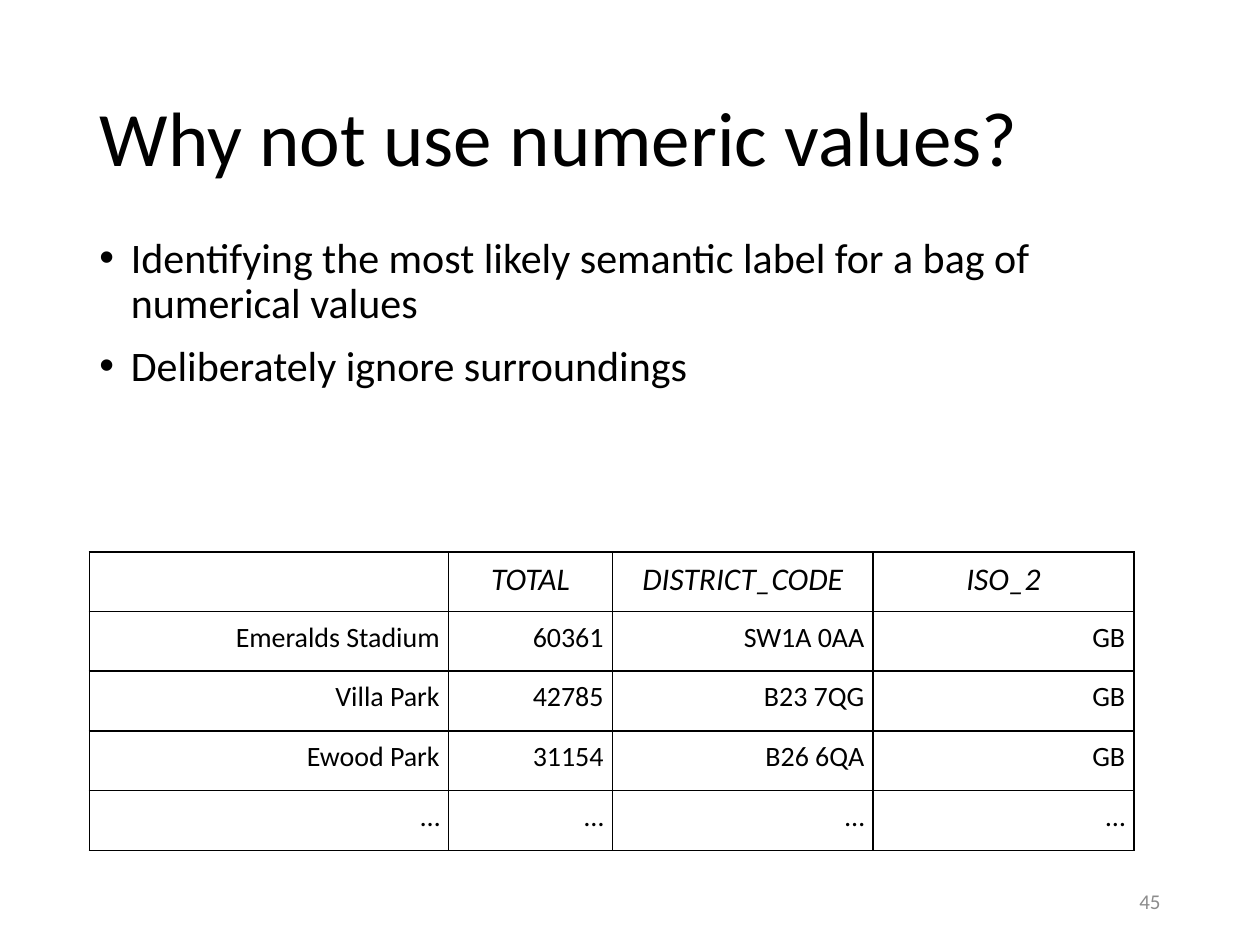
from dataclasses import dataclass

from lxml.etree import SubElement
from pptx import Presentation
from pptx.dml.color import RGBColor
from pptx.enum.text import MSO_ANCHOR as Anchor, MSO_AUTO_SIZE as AutoSize, PP_ALIGN as Align
from pptx.oxml import parse_xml
from pptx.oxml.ns import nsdecls, qn
from pptx.util import Inches, Pt

COLORS = {"text": "000000", "background": "FFFFFF", "border": "000000", "number": "8C8C8C"}
FONT = "Calibri"
BULLET_INDENT = Inches(0.25)
CELL_MARGIN = Inches(0.07)
BORDER_WIDTH = Pt(1)


@dataclass(frozen=True)
class Box:
    left: float
    top: float
    width: float
    height: float

    def lengths(self):
        return [Inches(v) for v in (self.left, self.top, self.width, self.height)]


@dataclass(frozen=True)
class TextStyle:
    size: int
    color: str = "text"
    italic: bool = False
    align: Align = Align.LEFT
    line_spacing: float = 1.0


TITLE = TextStyle(44, line_spacing=0.9)
BODY = TextStyle(24, line_spacing=0.9)
PAGE_NUMBER = TextStyle(12, color="number", align=Align.RIGHT)
HEADER = TextStyle(18, italic=True, align=Align.CENTER)
VALUE = TextStyle(16, align=Align.RIGHT)

BULLETS = [
    "Identifying the most likely semantic label for a bag of numerical values",
    "Deliberately ignore surroundings",
]
COLUMN_WIDTHS = [2.85, 1.3, 2.07, 2.07]
ROW_HEIGHT = 0.474
STADIUMS = [
    ["", "TOTAL", "DISTRICT_CODE", "ISO_2"],
    ["Emeralds Stadium", "60361", "SW1A 0AA", "GB"],
    ["Villa Park", "42785", "B23 7QG", "GB"],
    ["Ewood Park", "31154", "B26 6QA", "GB"],
    ["…"] * 4,
]


def format_paragraph(paragraph, style: TextStyle) -> None:
    paragraph.alignment = style.align
    paragraph.line_spacing = style.line_spacing
    font_values = {"name": FONT, "size": Pt(style.size), "italic": style.italic, "bold": False}
    for target in [paragraph.font, *(run.font for run in paragraph.runs)]:
        for attribute, value in font_values.items():
            setattr(target, attribute, value)
        target.color.rgb = RGBColor.from_string(COLORS[style.color])


def add_bullet(paragraph) -> None:
    properties = paragraph._p.get_or_add_pPr()
    properties.set("marL", str(BULLET_INDENT))
    properties.set("indent", str(-BULLET_INDENT))
    SubElement(properties, qn("a:buFont"), typeface="Arial")
    SubElement(properties, qn("a:buChar"), char="•")


def fill_text(shape, box: Box, lines: list[str], style: TextStyle,
              anchor: Anchor = Anchor.TOP, bulleted: bool = False) -> None:
    """Place a text shape and write one paragraph per line."""
    shape.left, shape.top, shape.width, shape.height = box.lengths()
    frame = shape.text_frame
    frame.text = "\n".join(lines)
    frame_values = {"word_wrap": True, "auto_size": AutoSize.NONE, "vertical_anchor": anchor}
    for attribute, value in frame_values.items():
        setattr(frame, attribute, value)
    for index, paragraph in enumerate(frame.paragraphs):
        if bulleted:
            add_bullet(paragraph)
        if index:
            paragraph.space_before = Pt(10)
        format_paragraph(paragraph, style)


def add_text(slide, box: Box, lines: list[str], style: TextStyle, **options) -> None:
    fill_text(slide.shapes.add_textbox(*box.lengths()), box, lines, style, **options)


def format_cell(cell, text: str, style: TextStyle) -> None:
    cell.text = text
    for side in ("left", "right", "top", "bottom"):
        setattr(cell, f"margin_{side}", CELL_MARGIN)
    format_paragraph(cell.text_frame.paragraphs[0], style)
    cell.fill.solid()
    cell.fill.fore_color.rgb = RGBColor.from_string(COLORS["background"])
    properties = cell._tc.get_or_add_tcPr()
    for index, edge in enumerate(("lnL", "lnR", "lnT", "lnB")):
        properties.insert(index, parse_xml(
            f'<a:{edge} {nsdecls("a")} w="{BORDER_WIDTH}"><a:solidFill>'
            f'<a:srgbClr val="{COLORS["border"]}"/></a:solidFill></a:{edge}>'))


def add_stadium_table(slide, left: float, top: float) -> None:
    box = Box(left, top, sum(COLUMN_WIDTHS), ROW_HEIGHT * len(STADIUMS))
    table = slide.shapes.add_table(len(STADIUMS), len(COLUMN_WIDTHS), *box.lengths()).table
    table.horz_banding = False
    for column, width in zip(table.columns, COLUMN_WIDTHS):
        column.width = Inches(width)
    for row_index, (row, values) in enumerate(zip(table.rows, STADIUMS)):
        row.height = Inches(ROW_HEIGHT)
        for cell, text in zip(row.cells, values):
            format_cell(cell, text, VALUE if row_index else HEADER)


def main() -> None:
    presentation = Presentation()
    presentation.slide_width, presentation.slide_height = Inches(10), Inches(7.5)
    slide = presentation.slides.add_slide(presentation.slide_layouts[5])
    add_stadium_table(slide, 0.71, 4.38)
    fill_text(slide.shapes.title, Box(0.69, 0.4, 8.62, 1.45),
              ["Why not use numeric values?"], TITLE, anchor=Anchor.MIDDLE)
    add_text(slide, Box(0.69, 1.83, 8.62, 1.41), BULLETS, BODY, bulleted=True)
    add_text(slide, Box(7.06, 6.95, 2.25, 0.4), ["45"], PAGE_NUMBER, anchor=Anchor.MIDDLE)
    presentation.save("out.pptx")


if __name__ == "__main__":
    main()
